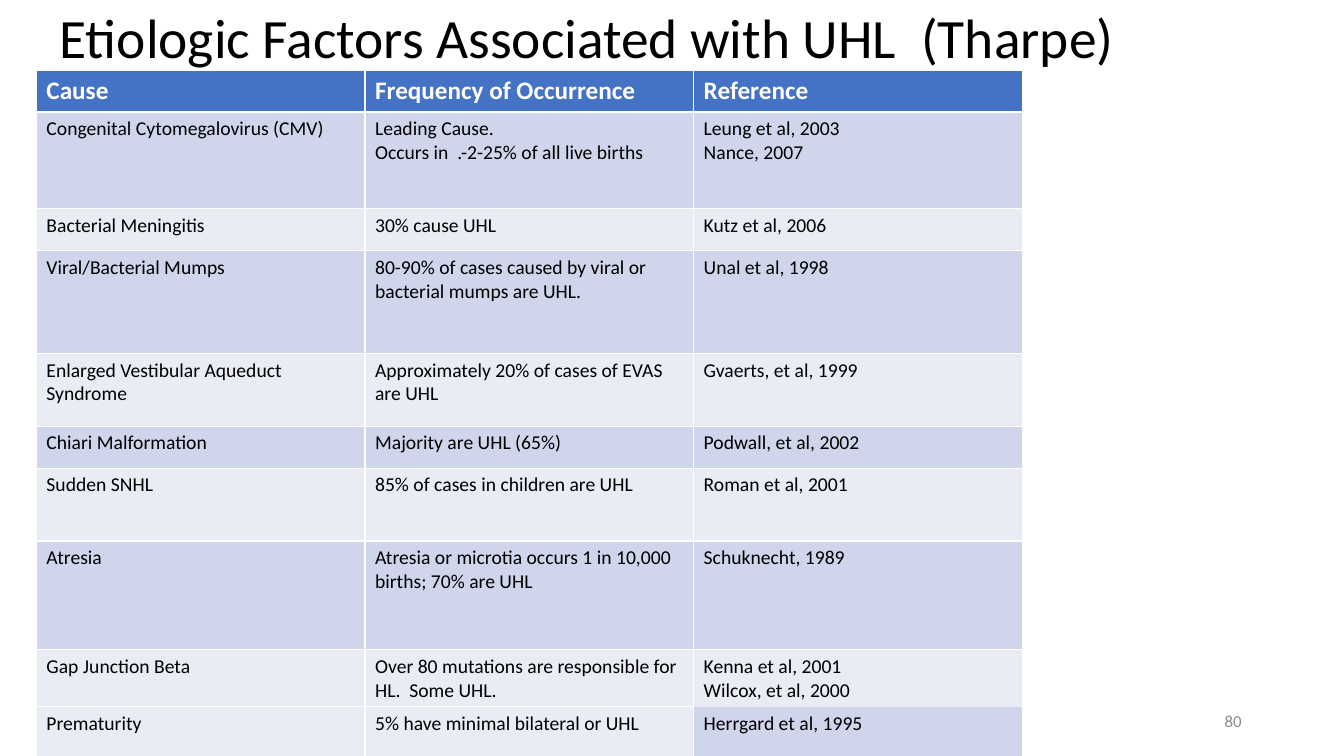
from pptx import Presentation
from pptx import util as u
from pptx.dml import color
from pptx.enum import text

HEADER_FILL, DARK_BAND, LIGHT_BAND = "4472C4", "CFD5EA", "E9EBF5"
HEADINGS = ("Cause", "Frequency of Occurrence", "Reference")

# Row height, then cause, frequency and reference; None continues the cell above.
FACTORS = [
    (69, "Congenital Cytomegalovirus (CMV)",
     "Leading Cause.\nOccurs in  .-2-25% of all live births",
     "Leung et al, 2003\nNance, 2007"),
    (30, "Bacterial Meningitis", "30% cause UHL", "Kutz et al, 2006"),
    (73.5, "Viral/Bacterial Mumps",
     "80-90% of cases caused by viral or bacterial mumps are UHL.",
     "Unal et al, 1998"),
    (52, "Enlarged Vestibular Aqueduct Syndrome",
     "Approximately 20% of cases of EVAS are UHL", "Gvaerts, et al, 1999"),
    (30, "Chiari Malformation", "Majority are UHL (65%)", "Podwall, et al, 2002"),
    (52, "Sudden SNHL", "85% of cases in children are UHL", "Roman et al, 2001"),
    (77.5, "Atresia",
     "Atresia or microtia occurs 1 in 10,000 births; 70% are UHL",
     "Schuknecht, 1989"),
    (39, "Gap Junction Beta",
     "Over 80 mutations are responsible for HL.  Some UHL.",
     "Kenna et al, 2001\nWilcox, et al, 2000"),
    (0, None, None, "Herrgard et al, 1995"),
    (36.5, "Prematurity", "5% have minimal bilateral or UHL", None),
]


def rgb(hex_code):
    return color.RGBColor.from_string(hex_code)


def write(frame, words, size, ink="000000", bold=False, align=None, spacing=None):
    frame.text = words
    for paragraph in frame.paragraphs:
        paragraph.alignment = align
        paragraph.line_spacing = spacing
        for run in paragraph.runs:
            run.font.name = "Calibri"
            run.font.size = u.Pt(size)
            run.font.bold = bold
            run.font.color.rgb = rgb(ink)


class SlideBuilder:
    def __init__(self, slide):
        self.slide = slide

    def label(self, left, top, width, height, words, size, **style):
        box = self.slide.shapes.add_textbox(*map(u.Pt, (left, top, width, height)))
        box.text_frame.word_wrap = True
        box.text_frame.vertical_anchor = text.MSO_ANCHOR.MIDDLE
        write(box.text_frame, words, size, **style)

    def table(self, left, top, column_width, headings, body, header_height):
        rows = [(header_height, *headings), *body]
        heights = [row[0] for row in rows]
        grid = self.slide.shapes.add_table(
            len(rows), len(headings), u.Pt(left), u.Pt(top),
            u.Pt(column_width * len(headings)), u.Pt(sum(heights))).table
        for column in grid.columns:
            column.width = u.Pt(column_width)
        for r, (height, *entries) in enumerate(rows):
            grid.rows[r].height = u.Pt(height)
            for c, words in enumerate(entries):
                cell = grid.cell(r, c)
                if words is None:
                    grid.cell(r - 1, c).merge(cell)
                    continue
                cell.fill.solid()
                if r == 0:
                    cell.fill.fore_color.rgb = rgb(HEADER_FILL)
                    write(cell.text_frame, words, 18, ink="FFFFFF", bold=True)
                else:
                    # The zero-height row shifts the banding of the last row.
                    band = DARK_BAND if r % 2 else LIGHT_BAND
                    cell.fill.fore_color.rgb = rgb(band)
                    write(cell.text_frame, words, 14)


def main():
    deck = Presentation()
    deck.slide_width, deck.slide_height = u.Pt(960), u.Pt(540)
    builder = SlideBuilder(deck.slides.add_slide(deck.slide_layouts[6]))
    builder.label(35.5, 8.5, 784, 41, "Etiologic Factors Associated with UHL  (Tharpe)",
                  39.6, spacing=0.9)
    builder.table(26, 50, 234.75, HEADINGS, FACTORS, header_height=30)
    builder.label(678, 500.5, 216, 29, "80", 12, ink="8C8C8C",
                  align=text.PP_ALIGN.RIGHT)
    deck.save("out.pptx")


if __name__ == "__main__":
    main()
